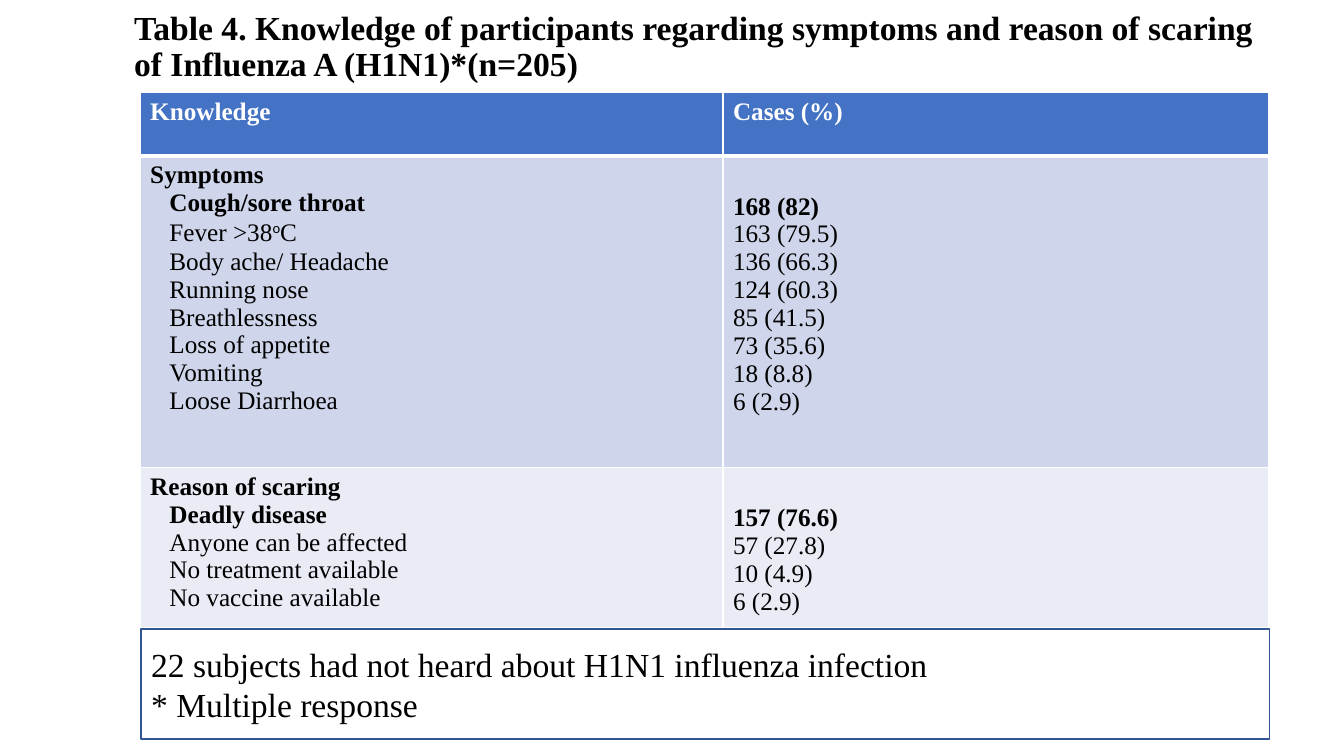
from lxml.etree import fromstring
from pptx import Presentation
from pptx.dml.color import RGBColor
from pptx.enum.shapes import MSO_SHAPE as Shape
from pptx.enum.text import MSO_ANCHOR as Anchor, MSO_AUTO_SIZE as Auto, PP_ALIGN as Align
from pptx.util import Inches, Pt

TITLE = ("Table 4. Knowledge of participants regarding symptoms and reason "
         "of scaring of Influenza A (H1N1)*(n=205)")
HEADS = ["Knowledge", "Cases (%)"]
GROUPS = [
    ("Symptoms", [
        ("Cough/sore throat", "168 (82)"),
        ("Fever >38^o^C", "163 (79.5)"),
        ("Body ache/ Headache", "136 (66.3)"),
        ("Running nose", "124 (60.3)"),
        ("Breathlessness", "85 (41.5)"),
        ("Loss of appetite", "73 (35.6)"),
        ("Vomiting", "18 (8.8)"),
        ("Loose Diarrhoea", "6 (2.9)"),
    ]),
    ("Reason of scaring", [
        ("Deadly disease", "157 (76.6)"),
        ("Anyone can be affected", "57 (27.8)"),
        ("No treatment available", "10 (4.9)"),
        ("No vaccine available", "6 (2.9)"),
    ]),
]
NOTES = ["22 subjects had not heard about H1N1 influenza infection",
         "* Multiple response"]
COLS = [5.78, 5.41]
ROWS = [0.63, 3.09, 1.59]

BLACK = RGBColor(0, 0, 0)
WHITE = RGBColor(255, 255, 255)
BLUE = RGBColor(0x44, 0x72, 0xC4)
NAVY = RGBColor(0x32, 0x54, 0x91)
BANDS = [RGBColor(0xCF, 0xD5, 0xEA), RGBColor(0xE9, 0xEB, 0xF5)]
NS = "http://schemas.openxmlformats.org/drawingml/2006/main"


def write(frame, lines, size=18, color=BLACK, bold=0, indent=0, space=None):
    """Fill a frame; the first `bold` lines are bold, lines after the first indented, ^x^ raised."""
    frame.word_wrap = True
    for row, line in enumerate(lines):
        para = frame.paragraphs[0] if row == 0 else frame.add_paragraph()
        para.alignment = Align.LEFT
        para.line_spacing = space
        if row and indent:
            para._p.get_or_add_pPr().set("marL", str(Inches(indent)))
        for part, text in enumerate(line.split("^")):
            run = para.add_run()
            run.text = text
            font = run.font
            font.size = Pt(size)
            font.bold = row < bold
            font.color.rgb = color
            font.name = "Calibri" if part % 2 else "Times New Roman"
            if part % 2:
                run._r.get_or_add_rPr().set("baseline", "30000")


def paint(cell, color, top=1, base=1):
    """Fill a cell and draw its white borders."""
    cell.fill.solid()
    cell.fill.fore_color.rgb = color
    sides = [("L", 1), ("R", 1), ("T", top), ("B", base)]
    for spot, (side, width) in enumerate(sides):
        line = fromstring(
            f'<a:ln{side} xmlns:a="{NS}" w="{Pt(width)}"><a:solidFill>'
            f'<a:srgbClr val="{WHITE}"/></a:solidFill></a:ln{side}>')
        cell._tc.get_or_add_tcPr().insert(spot, line)


def main():
    """Build the slide and save it."""
    deck = Presentation()
    deck.slide_width, deck.slide_height = Inches(13.33), Inches(7.5)
    slide = deck.slides.add_slide(deck.slide_layouts[5])

    title = slide.shapes.title
    title.left, title.top = Inches(1.23), Inches(0.03)
    title.width, title.height = Inches(11.5), Inches(0.89)
    title.text_frame.auto_size = Auto.NONE
    title.text_frame.vertical_anchor = Anchor.MIDDLE
    write(title.text_frame, [TITLE], size=24, bold=1, space=0.9)

    table = slide.shapes.add_table(
        len(ROWS), len(COLS), Inches(1.39), Inches(0.92),
        Inches(sum(COLS)), Inches(sum(ROWS))).table
    for col, width in zip(table.columns, COLS):
        col.width = Inches(width)
    for row, height in zip(table.rows, ROWS):
        row.height = Inches(height)
    for col, head in enumerate(HEADS):
        cell = table.cell(0, col)
        paint(cell, BLUE, base=3)
        write(cell.text_frame, [head], color=WHITE, bold=1)
    for row, (name, items) in enumerate(GROUPS, 1):
        label, count = table.cell(row, 0), table.cell(row, 1)
        for cell in (label, count):
            paint(cell, BANDS[row - 1], top=3 if row == 1 else 1)
        names, counts = zip(*items)
        write(label.text_frame, [name, *names], bold=2, indent=0.19)
        count.margin_top = Inches(0.36)
        write(count.text_frame, counts, bold=1)

    box = slide.shapes.add_shape(
        Shape.RECTANGLE, Inches(1.4), Inches(6.24), Inches(11.19), Inches(1.09))
    box.shadow.inherit = False
    box.fill.solid()
    box.fill.fore_color.rgb = WHITE
    box.line.color.rgb = NAVY
    box.line.width = Pt(1)
    box.text_frame.vertical_anchor = Anchor.MIDDLE
    write(box.text_frame, NOTES, size=24)

    deck.save("out.pptx")


if __name__ == "__main__":
    main()
